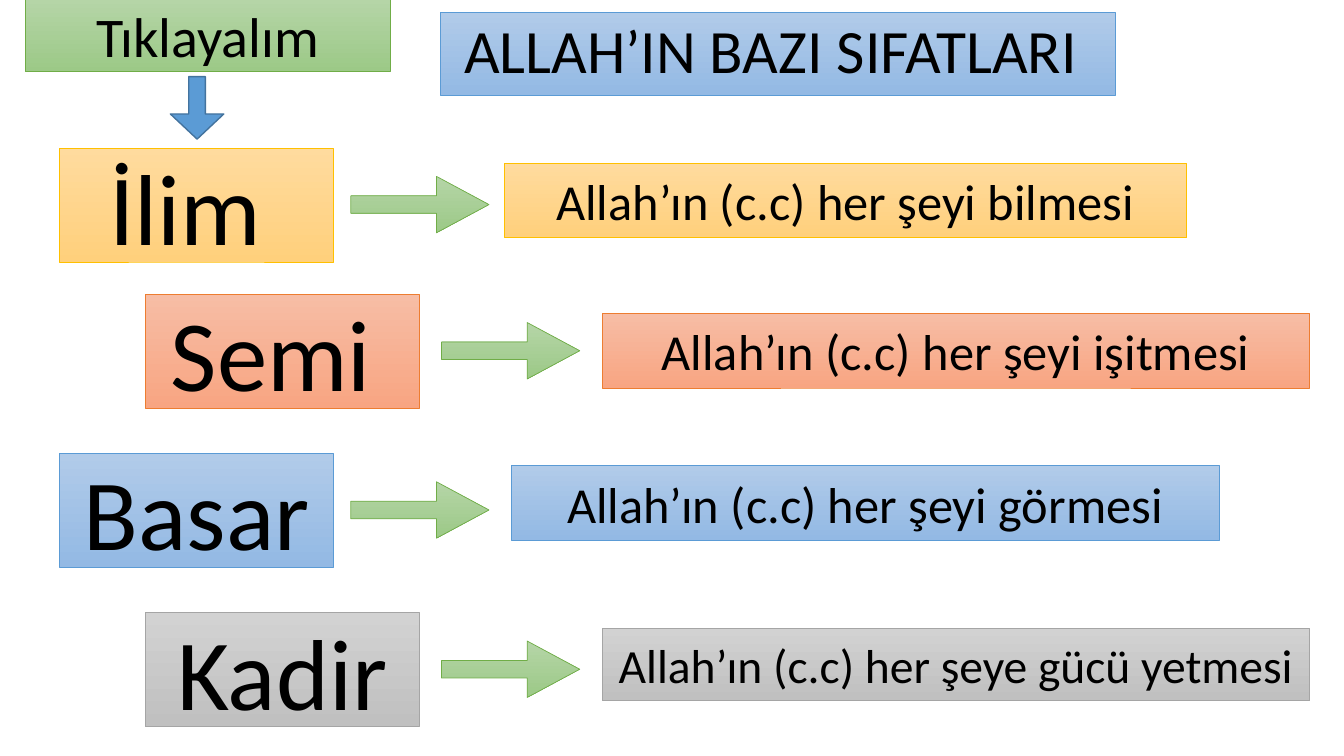
from pptx import Presentation
from pptx.dml.color import RGBColor
from pptx.enum.shapes import MSO_SHAPE
from pptx.enum.text import MSO_ANCHOR, MSO_AUTO_SIZE, PP_ALIGN
from pptx.util import Inches, Pt

RECT, RIGHT, DOWN = MSO_SHAPE.RECTANGLE, MSO_SHAPE.RIGHT_ARROW, MSO_SHAPE.DOWN_ARROW
CENTER, MIDDLE, NO_FIT = PP_ALIGN.CENTER, MSO_ANCHOR.MIDDLE, MSO_AUTO_SIZE.NONE

COLORS = {"text": "000000", "arrow": "5B9BD5", "edge": "43739E"}
# Gradient top, gradient bottom, outline
TONES = {
    "gold": ("FFDB9E", "FFD07C", "FFC000"),
    "coral": ("F7BDA5", "F8A582", "ED7D31"),
    "blue": ("B1CBE9", "93B9E4", "5B9BD5"),
    "gray": ("D2D2D2", "C0C0C0", "A5A5A5"),
    "green": ("B5D5A7", "9CC987", "70AD47"),
}


def rgb(code):
    return RGBColor.from_string(code)


class Board:
    """Holds the text style and the current slide."""

    def __init__(self, deck, font="Calibri"):
        self.slide = deck.slides.add_slide(deck.slide_layouts[5])
        self.font = font

    def tint(self, shape, tone):
        top, bottom, edge = TONES[tone]
        shape.fill.gradient()
        shape.fill.gradient_angle = 270
        for stop, code in zip(shape.fill.gradient_stops, (top, bottom)):
            stop.color.rgb = rgb(code)
        shape.line.color.rgb = rgb(edge)
        shape.line.width = Pt(0.5)

    def label(self, shape, text, size):
        frame = shape.text_frame
        frame.text = text
        frame.word_wrap = True
        frame.auto_size = NO_FIT
        frame.vertical_anchor = MIDDLE
        para = frame.paragraphs[0]
        para.alignment = CENTER
        font = para.runs[0].font
        font.name, font.size = self.font, Pt(size)
        font.color.rgb = rgb(COLORS["text"])

    def title(self, text, box, tone, size):
        shape = self.slide.shapes.title
        shape.left, shape.top, shape.width, shape.height = map(Inches, box)
        self.tint(shape, tone)
        self.label(shape, text, size)
        shape.text_frame.paragraphs[0].line_spacing = 0.9

    def add(self, kind, box):
        shape = self.slide.shapes.add_shape(kind, *map(Inches, box))
        shape.shadow.inherit = False
        return shape

    def box(self, text, box, tone, size):
        shape = self.add(RECT, box)
        self.tint(shape, tone)
        self.label(shape, text, size)

    def arrow(self, kind, box, head):
        shape = self.add(kind, box)
        shape.adjustments[0], shape.adjustments[1] = 0.31, head
        return shape


def main():
    deck = Presentation()
    deck.slide_width, deck.slide_height = Inches(13.33), Inches(7.5)
    board = Board(deck)

    # Heading
    board.title("ALLAH’IN BAZI SIFATLARI ", (4.37, 0.12, 6.69, 0.83), "blue", 44)

    # Attributes: term, top, tone, meaning, meaning box, meaning size
    rows = [
        ("İlim ", 1.47, "gold", "Allah’ın (c.c) her şeyi bilmesi",
         (5, 1.62, 6.77, 0.74), 36),
        ("Semi ", 2.92, "coral", "Allah’ın (c.c) her şeyi işitmesi",
         (5.97, 3.11, 7.02, 0.74), 36),
        ("Basar", 4.5, "blue", "Allah’ın (c.c) her şeyi görmesi",
         (5.07, 4.62, 7.02, 0.74), 36),
        ("Kadir", 6.08, "gray", "Allah’ın (c.c) her şeye gücü yetmesi",
         (5.97, 6.23, 7.02, 0.72), 34),
    ]
    for i, (term, top, tone, text, area, size) in enumerate(rows):
        # Every second row is set further right
        left, tail = ((0.59, 3.48), (1.44, 4.38))[i % 2]
        board.box(term, (left, top, 2.72, 1.13), tone, 72)
        arrow = board.arrow(RIGHT, (tail, top + 0.28, 1.37, 0.56), 0.93)
        board.tint(arrow, "green")
        board.box(text, area, tone, size)

    # Prompt and its arrow
    board.box("Tıklayalım", (0.25, -0.01, 3.62, 0.72), "green", 40)
    arrow = board.arrow(DOWN, (1.69, 0.76, 0.53, 0.62), 0.47)
    arrow.fill.solid()
    arrow.fill.fore_color.rgb = rgb(COLORS["arrow"])
    arrow.line.color.rgb = rgb(COLORS["edge"])
    arrow.line.width = Pt(1)

    deck.save("out.pptx")


if __name__ == "__main__":
    main()
